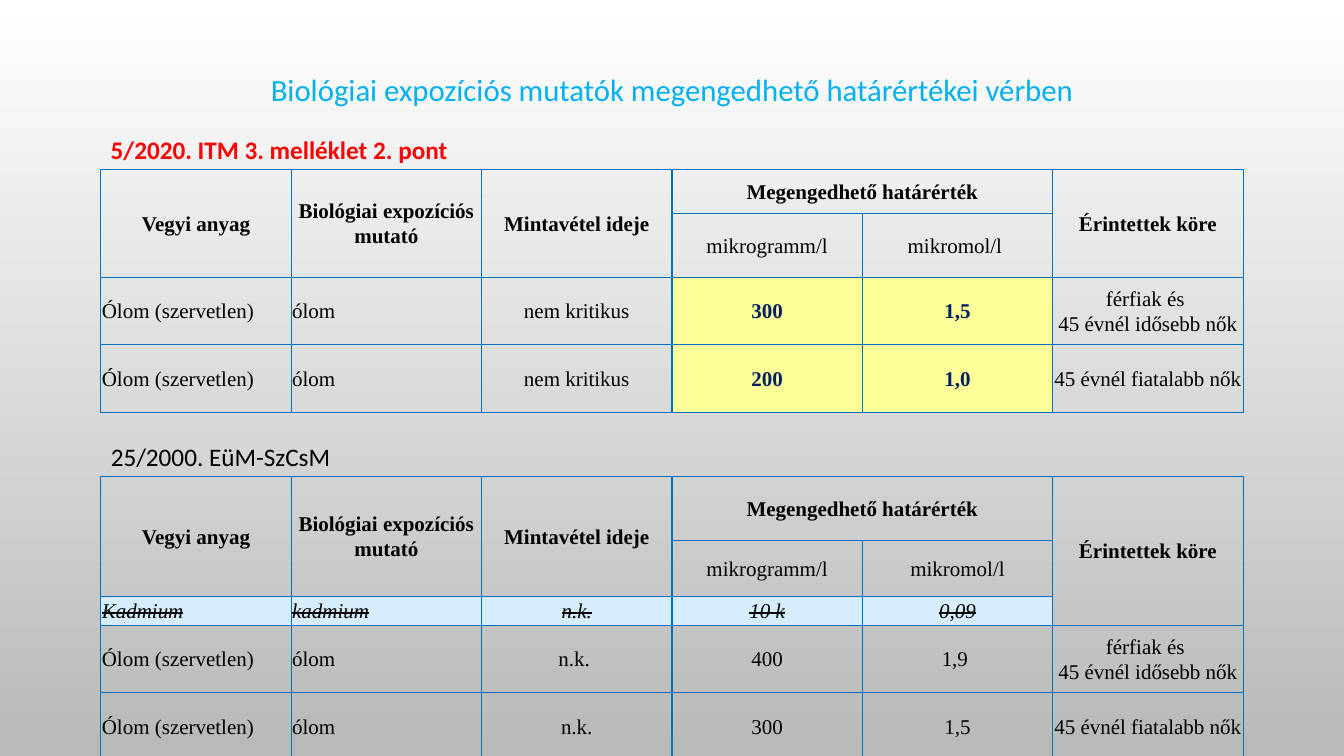
from dataclasses import dataclass

from lxml.etree import SubElement
from pptx import Presentation
from pptx.dml.color import RGBColor as Color
from pptx.enum.text import MSO_ANCHOR as Anchor, MSO_AUTO_SIZE as AutoSize, PP_ALIGN as Align
from pptx.oxml.ns import qn
from pptx.util import Inches, Pt


@dataclass(frozen=True)
class Theme:
    heading_font: str = "Calibri"
    table_font: str = "Times New Roman"
    title_size: int = 22
    caption_size: int = 18
    table_size: int = 15
    title: str = "00B0F0"
    text: str = "000000"
    current: str = "FF0000"
    limit: str = "002060"
    limit_fill: str = "FFFF99"
    repealed_fill: str = "D5EDFC"
    border: str = "0070C0"
    background: tuple = ("FFFFFF", "B9B9B9")


@dataclass(frozen=True)
class CellStyle:
    color: str = Theme.text
    bold: bool = False
    repealed: bool = False
    fill: str = ""


THEME = Theme()
PLAIN = CellStyle()
HEADER = CellStyle(bold=True)
LIMIT = CellStyle(color=THEME.limit, bold=True, fill=THEME.limit_fill)
REPEALED = CellStyle(repealed=True, fill=THEME.repealed_fill)

COLUMN_COUNT = 6
LIMIT_COLUMNS = (3, 4)
OLDER = "férfiak és \v45 évnél idősebb nők"
YOUNGER = "45 évnél fiatalabb nők"
LEAD = ("Ólom (szervetlen)", "ólom")


def header_rows(indicator, unit):
    return [
        ("Vegyi anyag", indicator, "Mintavétel ideje", "Megengedhető határérték", None, "Érintettek köre"),
        (None, None, None, "mikrogramm/l", unit, None),
    ]


CURRENT_ROWS = header_rows("Biológiai expozíciós\vmutató", "mikromol/l ") + [
    (*LEAD, "nem kritikus", "300", "1,5", OLDER),
    (*LEAD, "nem kritikus", "200", "1,0", YOUNGER),
]
FORMER_ROWS = header_rows("Biológiai expozíciós mutató", "mikromol/l") + [
    ("Kadmium", "kadmium", "n.k.", "10 k", "0,09", None),
    (*LEAD, "n.k. ", "400", "1,9 ", OLDER),
    (*LEAD, "n.k.", "300", "1,5", YOUNGER),
]


def current_style(row, column):
    if row == 0:
        return HEADER
    return LIMIT if row > 1 and column in LIMIT_COLUMNS else PLAIN


def former_style(row, column):
    if row == 0:
        return HEADER
    return REPEALED if row == 2 else PLAIN


def set_font(paragraph, name, size, color, bold=False):
    for run in paragraph.runs:
        run.font.name = name
        run.font.size = Pt(size)
        run.font.bold = bold
        run.font.color.rgb = Color.from_string(color)


def add_heading(slide, box, text, size, color, bold=False):
    shape = slide.shapes.add_textbox(*map(Inches, box))
    frame = shape.text_frame
    frame.word_wrap = True
    frame.auto_size = AutoSize.SHAPE_TO_FIT_TEXT
    frame.text = text
    paragraph = frame.paragraphs[0]
    set_font(paragraph, THEME.heading_font, size, color, bold)
    return paragraph


def add_borders(cell):
    properties = cell._tc.get_or_add_tcPr()
    for side in ("lnL", "lnR", "lnT", "lnB"):
        line = SubElement(properties, qn(f"a:{side}"), w=str(Pt(1)))
        fill = SubElement(line, qn("a:solidFill"))
        SubElement(fill, qn("a:srgbClr"), val=THEME.border)


def fill_cell(cell, text, align, style):
    cell.vertical_anchor = Anchor.MIDDLE
    cell.margin_left = cell.margin_right = Inches(0.01)
    cell.margin_top = cell.margin_bottom = Inches(0.01)
    add_borders(cell)
    if style.fill:
        cell.fill.solid()
        cell.fill.fore_color.rgb = Color.from_string(style.fill)
    else:
        cell.fill.background()
    if text is None:
        return
    cell.text_frame.text = text
    paragraph = cell.text_frame.paragraphs[0]
    paragraph.alignment = align
    paragraph.line_spacing = 1.07
    paragraph.space_after = Pt(8)
    set_font(paragraph, THEME.table_font, THEME.table_size, style.color, style.bold)
    if style.repealed:
        for run in paragraph.runs:
            run.font.italic = True
            run.font._element.set("strike", "sngStrike")


def add_limit_table(slide, box, rows, heights, style_of, audience_span):
    frame = slide.shapes.add_table(len(rows), COLUMN_COUNT, *map(Inches, box))
    table = frame.table
    table.first_row = False
    table.horz_banding = False
    for column in table.columns:
        column.width = Inches(box[2] / COLUMN_COUNT)
    for row, height in zip(table.rows, heights):
        row.height = Inches(height)
    for row, texts in enumerate(rows):
        for column, text in enumerate(texts):
            left_aligned = row > 1 and column < 2
            align = Align.LEFT if left_aligned else Align.CENTER
            style = PLAIN if text is None else style_of(row, column)
            fill_cell(table.cell(row, column), text, align, style)
    for column in range(3):
        table.cell(0, column).merge(table.cell(1, column))
    table.cell(0, LIMIT_COLUMNS[0]).merge(table.cell(0, LIMIT_COLUMNS[1]))
    table.cell(0, 5).merge(table.cell(audience_span - 1, 5))


def add_regulation(slide, box, caption, color, bold, rows, heights, style_of, audience_span=2):
    left, top, width, caption_width = box
    caption_height = 0.4
    table_box = (left, top + caption_height, width, sum(heights))
    add_limit_table(slide, table_box, rows, heights, style_of, audience_span)
    caption_box = (left, top, caption_width, caption_height)
    add_heading(slide, caption_box, caption, THEME.caption_size, color, bold)


def set_background(slide):
    fill = slide.background.fill
    fill.gradient()
    fill.gradient_angle = 270
    for stop, color in zip(fill.gradient_stops, THEME.background):
        stop.color.rgb = Color.from_string(color)


def main():
    presentation = Presentation()
    presentation.slide_width = Inches(13.33)
    presentation.slide_height = Inches(7.5)
    slide = presentation.slides.add_slide(presentation.slide_layouts[6])
    set_background(slide)
    title = add_heading(
        slide, (1.08, 0.54, 11.17, 0.58),
        "Biológiai expozíciós mutatók megengedhető határértékei vérben",
        THEME.title_size, THEME.title,
    )
    title.alignment = Align.CENTER
    title.line_spacing = 1.3
    add_regulation(
        slide, (1, 1.28, 11.33, 4.26), "5/2020. ITM 3. melléklet 2. pont",
        THEME.current, True, CURRENT_ROWS, (0.44, 0.63, 0.67, 0.67), current_style,
    )
    add_regulation(
        slide, (1, 4.33, 11.33, 3.01), "25/2000. EüM-SzCsM",
        THEME.text, False, FORMER_ROWS, (0.63, 0.24, 0.24, 0.67, 0.67), former_style, 3,
    )
    presentation.save("out.pptx")


if __name__ == "__main__":
    main()
